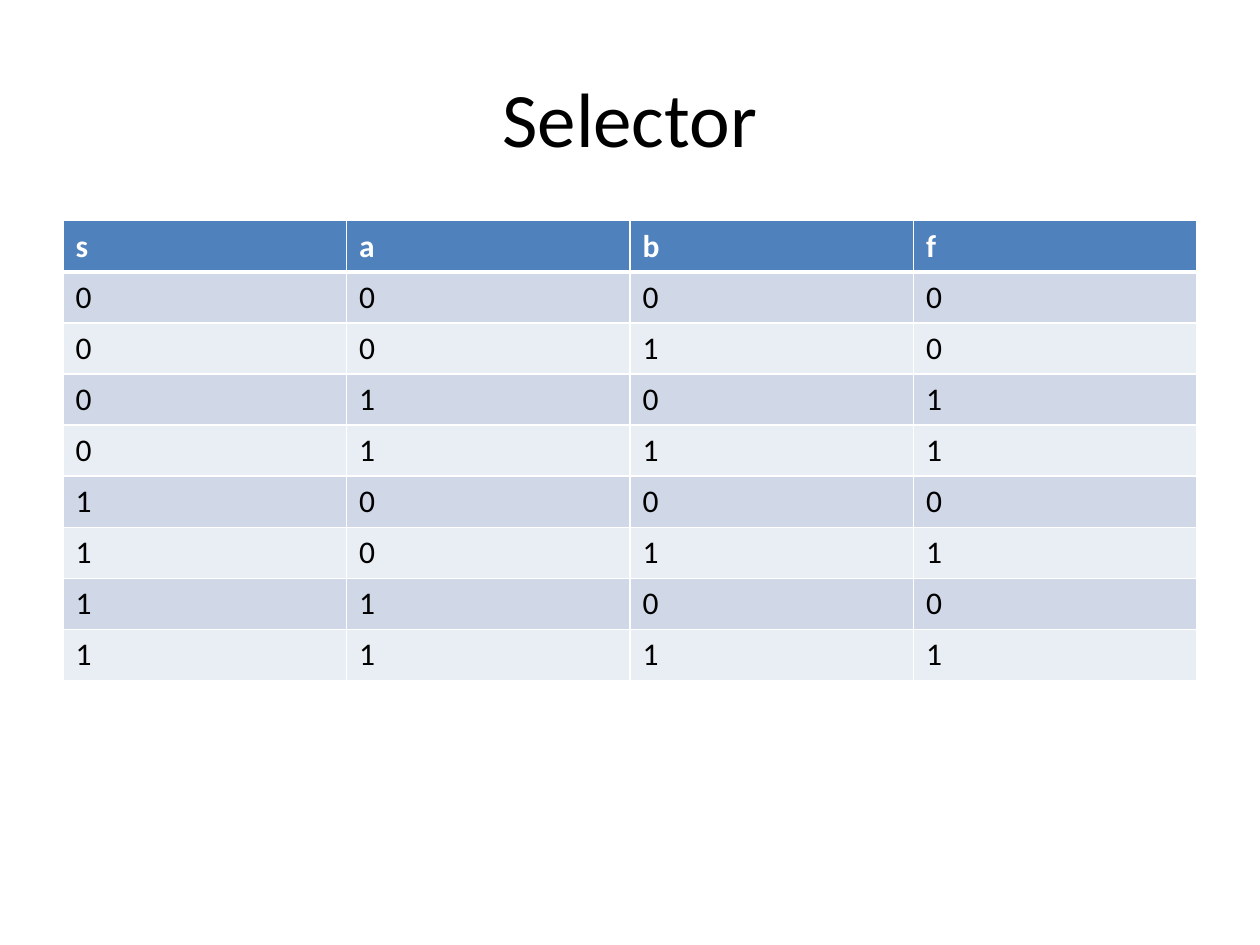
import itertools

import lxml.etree
import pptx
import pptx.dml.color
import pptx.enum.text
import pptx.oxml.ns
import pptx.util

Cm = pptx.util.Cm
Pt = pptx.util.Pt


def color(code):
    return pptx.dml.color.RGBColor.from_string(code)


def border(cell, widths):
    """Draw white cell edges; widths are points for left, right, top, bottom."""
    props = cell._tc.get_or_add_tcPr()
    qn = pptx.oxml.ns.qn
    for place, (side, width) in enumerate(zip("LRTB", widths)):
        line = lxml.etree.Element(qn("a:ln" + side), w=str(Pt(width)))
        fill = lxml.etree.SubElement(line, qn("a:solidFill"))
        lxml.etree.SubElement(fill, qn("a:srgbClr"), val="FFFFFF")
        props.insert(place, line)


deck = pptx.Presentation()
deck.slide_width, deck.slide_height = Cm(25.4), Cm(19.05)
slide = deck.slides.add_slide(deck.slide_layouts[6])

# Title
box = slide.shapes.add_textbox(Cm(1.27), Cm(0.76), Cm(22.86), Cm(3.18))
frame = box.text_frame
frame.word_wrap = True
frame.vertical_anchor = pptx.enum.text.MSO_ANCHOR.MIDDLE
para = frame.paragraphs[0]
para.alignment = pptx.enum.text.PP_ALIGN.CENTER
run = para.add_run()
run.text = "Selector"
run.font.name = "Calibri"
run.font.size = Pt(44)
run.font.color.rgb = color("000000")

# Truth table: f follows b when s is 1, otherwise a
rows = [("s", "a", "b", "f")]
for s, a, b in itertools.product((0, 1), repeat=3):
    rows.append((s, a, b, b if s else a))

high = Cm(1.03)
table = slide.shapes.add_table(
    len(rows), 4, Cm(1.27), Cm(4.45), Cm(22.86), high * len(rows)
).table
for y, row in enumerate(rows):
    table.rows[y].height = high
    head = y == 0
    back = "4F81BD" if head else ("E9EDF4", "D0D8E8")[y % 2]
    for x, value in enumerate(row):
        cell = table.cell(y, x)
        cell.fill.solid()
        cell.fill.fore_color.rgb = color(back)
        border(cell, (1, 1, 3 if y == 1 else 1, 3 if head else 1))
        run = cell.text_frame.paragraphs[0].add_run()
        run.text = str(value)
        run.font.name = "Calibri"
        run.font.size = Pt(18)
        run.font.bold = head
        run.font.color.rgb = color("FFFFFF" if head else "000000")

deck.save("out.pptx")
